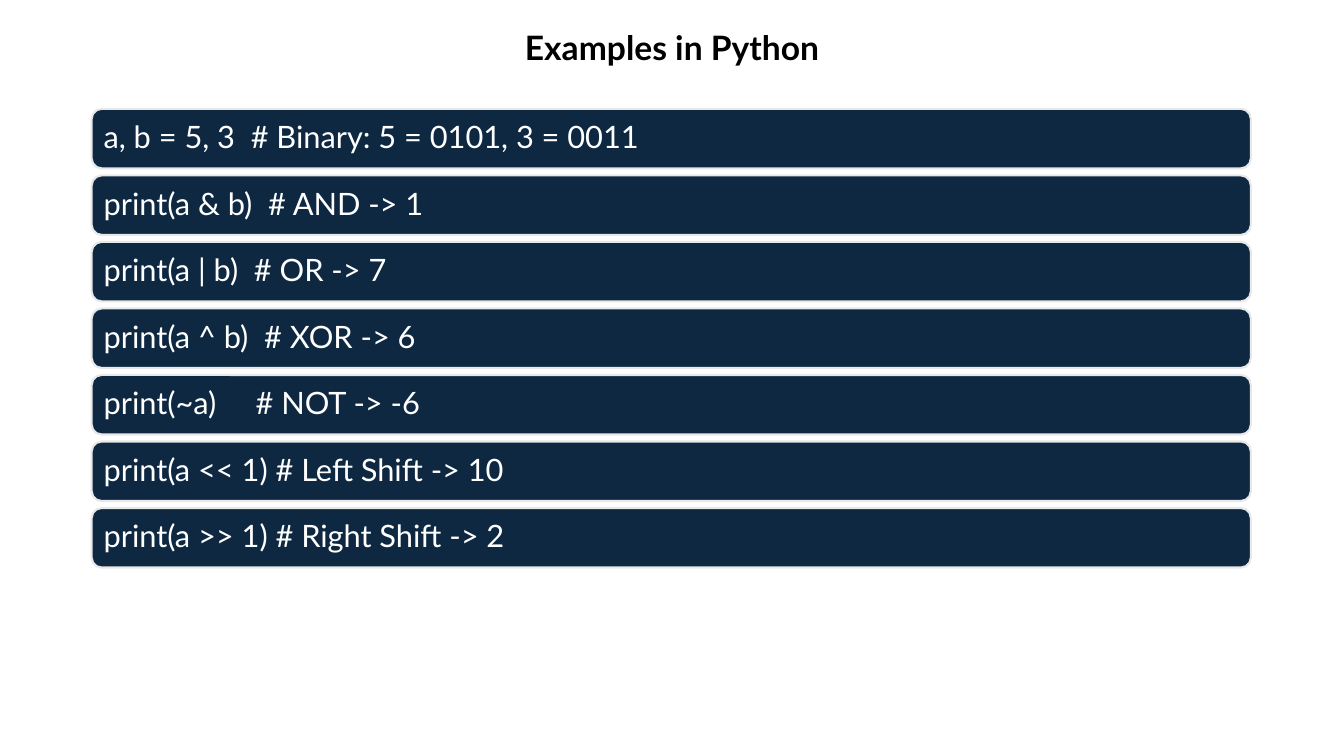
from pptx import Presentation
from pptx.dml.color import RGBColor
from pptx.enum.shapes import MSO_SHAPE
from pptx.enum.text import MSO_ANCHOR, PP_ALIGN
from pptx.util import Pt

ROUND = MSO_SHAPE.ROUNDED_RECTANGLE
MIDDLE = MSO_ANCHOR.MIDDLE
LEFT, CENTER = PP_ALIGN.LEFT, PP_ALIGN.CENTER
PX = 3048  # 300 px to the inch
COLORS = {"navy": "0E2841", "edge": "E8E8E8", "white": "FFFFFF", "black": "000000"}


def color(name):
    return RGBColor.from_string(COLORS[name])


def write(shape, text, size, ink, bold=False, align=LEFT, spacing=1.0):
    frame = shape.text_frame
    frame.word_wrap = True
    line = frame.paragraphs[0]
    line.alignment = align
    line.line_spacing = spacing
    run = line.add_run()
    run.text = text
    run.font.name = "Lato"
    run.font.size = Pt(size)
    run.font.bold = bold
    run.font.color.rgb = color(ink)
    return frame


deck = Presentation()
deck.slide_width, deck.slide_height = 4000 * PX, 2250 * PX
slide = deck.slides.add_slide(deck.slide_layouts[6])

# Code lines, one bar each
codes = [
    "a, b = 5, 3  # Binary: 5 = 0101, 3 = 0011",
    "print(a & b)  # AND -> 1",
    "print(a | b)  # OR -> 7",
    "print(a ^ b)  # XOR -> 6",
    "print(~a)     # NOT -> -6",
    "print(a << 1) # Left Shift -> 10",
    "print(a >> 1) # Right Shift -> 2",
]
top, pitch, inset = 324, 198, 27 * PX
for row, code in enumerate(codes):
    bar = slide.shapes.add_shape(
        ROUND, 273 * PX, (top + row * pitch) * PX, 3450 * PX, 177 * PX)
    bar.shadow.inherit = False
    bar.fill.solid()
    bar.fill.fore_color.rgb = color("navy")
    bar.line.color.rgb = color("edge")
    bar.line.width = Pt(1.5)
    frame = write(bar, code, 22, "white", spacing=0.9)
    frame.vertical_anchor = MIDDLE
    frame.margin_left = frame.margin_right = inset
    frame.margin_top = frame.margin_bottom = inset

# Title
title = slide.shapes.add_textbox(1000 * PX, 66 * PX, 2000 * PX, 150 * PX)
write(title, "Examples in Python", 24, "black", bold=True, align=CENTER)

deck.save("out.pptx")
